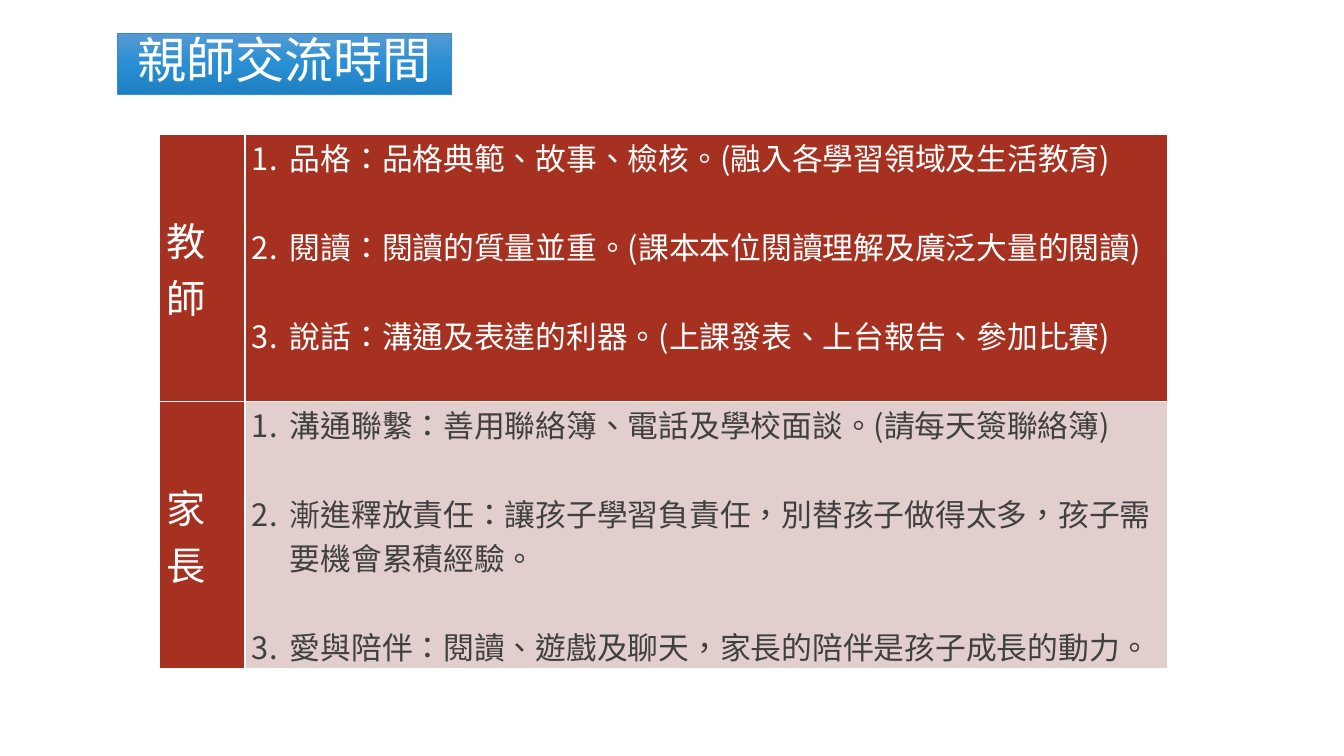
from copy import deepcopy
from dataclasses import dataclass

from lxml import etree
from pptx import Presentation
from pptx.dml.color import RGBColor
from pptx.enum.text import MSO_ANCHOR, MSO_AUTO_SIZE, PP_ALIGN
from pptx.oxml.ns import qn
from pptx.util import Pt

MIDDLE, TOP = MSO_ANCHOR.MIDDLE, MSO_ANCHOR.TOP
CENTER = PP_ALIGN.CENTER
NO_AUTOFIT = MSO_AUTO_SIZE.NONE
TITLE_ONLY = 5


@dataclass(frozen=True)
class Theme:
    white: str = "FFFFFF"
    red: str = "A63121"
    pink: str = "E1CECD"
    dark: str = "404040"
    title_line: str = "318DCB"
    title_gradient: tuple = ((0, "569AD3"), (0.5, "298ED3"), (1, "1E80C2"))
    heading_font: str = "Arial"
    list_font: str = "Noto Sans CJK SC"
    title_size: float = 35.1
    heading_size: float = 28
    list_size: float = 22
    list_gap: float = 31.8


theme = Theme()


def add_run(paragraph, text, size, font_name, color):
    run = paragraph.add_run()
    run.text = text
    run.font.size = Pt(size)
    run.font.name = font_name
    run.font.color.rgb = RGBColor.from_string(color)
    properties = run.font._element
    properties.set("lang", "zh-TW")
    etree.SubElement(properties, qn("a:ea"), typeface=theme.list_font)


def format_cell(cell, fill, anchor):
    cell.margin_left = cell.margin_right = Pt(5)
    cell.margin_top = cell.margin_bottom = 0
    cell.vertical_anchor = anchor
    properties = cell._tc.get_or_add_tcPr()
    for side in ("lnL", "lnR", "lnT", "lnB"):
        border = etree.SubElement(properties, qn(f"a:{side}"), w=str(Pt(1)))
        border_fill = etree.SubElement(border, qn("a:solidFill"))
        etree.SubElement(border_fill, qn("a:srgbClr"), val=theme.white)
    cell.fill.solid()
    cell.fill.fore_color.rgb = RGBColor.from_string(fill)


presentation = Presentation()
presentation.slide_width = Pt(960)
presentation.slide_height = Pt(540)
slide = presentation.slides.add_slide(presentation.slide_layouts[TITLE_ONLY])

title = slide.shapes.title
title.left, title.top, title.width, title.height = Pt(84), Pt(24), Pt(238.5), Pt(43.5)
title.fill.gradient()
title.fill.gradient_angle = 270
stop_list = title._element.spPr.find(".//" + qn("a:gsLst"))
stop_list.append(deepcopy(stop_list[0]))
for stop, (position, color) in zip(title.fill.gradient_stops, theme.title_gradient):
    stop.position = position
    stop.color.rgb = RGBColor.from_string(color)
title.line.color.rgb = RGBColor.from_string(theme.title_line)
title.line.width = Pt(0.5)
title.text_frame.auto_size = NO_AUTOFIT
title.text_frame.word_wrap = True
title.text_frame.vertical_anchor = MIDDLE
paragraph = title.text_frame.paragraphs[0]
paragraph.alignment = CENTER
paragraph.line_spacing = 0.8
add_run(paragraph, "親師交流時間", theme.title_size, theme.heading_font, theme.white)

roles = [
    ("教師", theme.red, theme.white, [
        "品格：品格典範、故事、檢核。(融入各學習領域及生活教育)",
        "閱讀：閱讀的質量並重。(課本本位閱讀理解及廣泛大量的閱讀)",
        "說話：溝通及表達的利器。(上課發表、上台報告、參加比賽)",
    ]),
    ("家長", theme.pink, theme.dark, [
        "溝通聯繫：善用聯絡簿、電話及學校面談。(請每天簽聯絡簿)",
        "漸進釋放責任：讓孩子學習負責任，別替孩子做得太多，孩子需要機會累積經驗。",
        "愛與陪伴：閱讀、遊戲及聊天，家長的陪伴是孩子成長的動力。",
    ]),
]

table = slide.shapes.add_table(len(roles), 2, Pt(114), Pt(96), Pt(720), Pt(380)).table
table.columns[0].width = Pt(61)
table.columns[1].width = Pt(659)

for row, (role, list_fill, list_color, items) in enumerate(roles):
    role_cell, list_cell = table.cell(row, 0), table.cell(row, 1)
    format_cell(role_cell, theme.red, MIDDLE)
    format_cell(list_cell, list_fill, TOP)
    add_run(role_cell.text_frame.paragraphs[0], role,
            theme.heading_size, theme.heading_font, theme.white)
    for index, item in enumerate(items):
        frame = list_cell.text_frame
        paragraph = frame.add_paragraph() if index else frame.paragraphs[0]
        if index:
            paragraph.space_before = Pt(theme.list_gap)
        properties = paragraph._p.get_or_add_pPr()
        properties.set("marL", str(Pt(27)))
        properties.set("indent", str(-Pt(27)))
        etree.SubElement(properties, qn("a:buFont"), typeface=theme.list_font)
        etree.SubElement(properties, qn("a:buAutoNum"), type="arabicPeriod")
        add_run(paragraph, item, theme.list_size, theme.list_font, list_color)

presentation.save("out.pptx")
